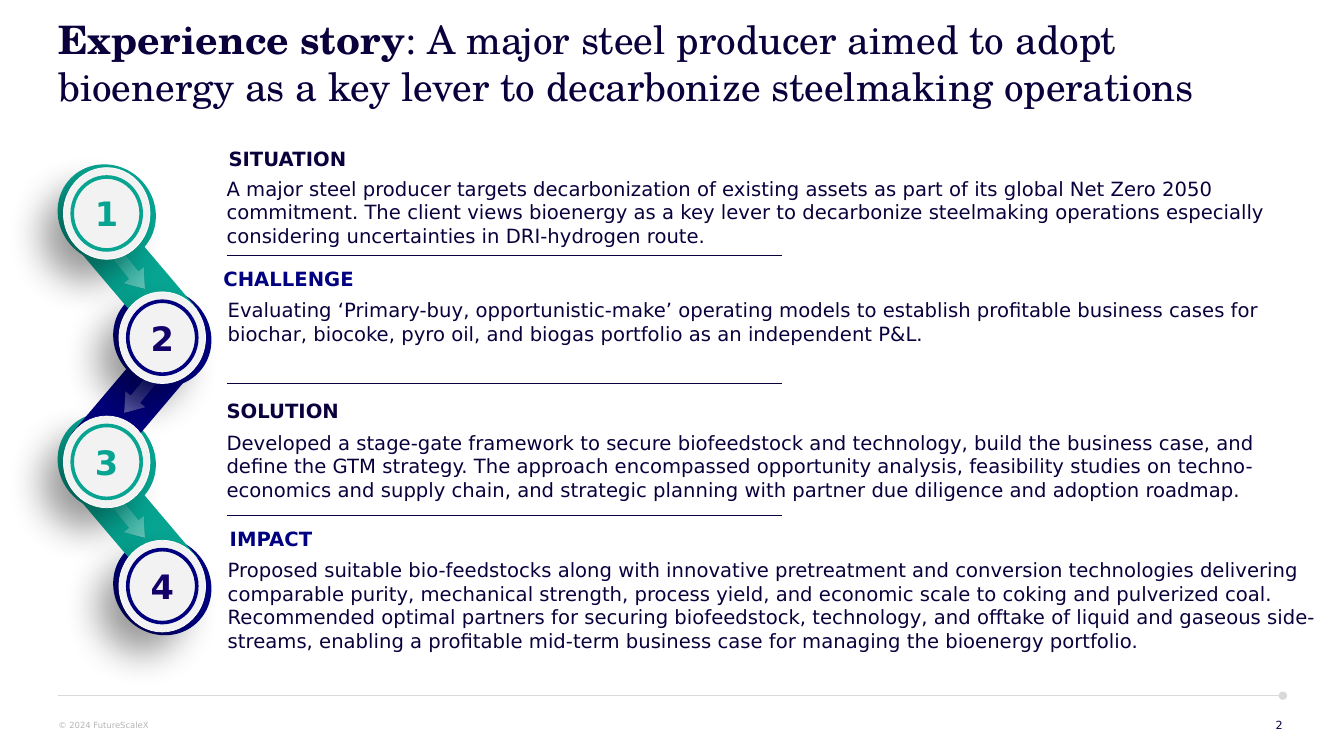
"""Build the experience story slide with four numbered steps."""
from dataclasses import dataclass

from lxml import etree
from pptx import Presentation
from pptx.dml.color import RGBColor
from pptx.enum.shapes import MSO_CONNECTOR, MSO_SHAPE
from pptx.enum.text import MSO_ANCHOR, MSO_AUTO_SIZE, PP_ALIGN
from pptx.oxml.ns import qn
from pptx.util import Cm, Pt

STRAIGHT = MSO_CONNECTOR.STRAIGHT
OVAL, RECT = MSO_SHAPE.OVAL, MSO_SHAPE.RECTANGLE
DONUT, ARROW = MSO_SHAPE.DONUT, MSO_SHAPE.RIGHT_ARROW
TOP, MIDDLE = MSO_ANCHOR.TOP, MSO_ANCHOR.MIDDLE
LEFT, CENTER, RIGHT = PP_ALIGN.LEFT, PP_ALIGN.CENTER, PP_ALIGN.RIGHT
GROW, FIXED = MSO_AUTO_SIZE.SHAPE_TO_FIT_TEXT, MSO_AUTO_SIZE.NONE

INK = RGBColor(0x0B, 0x00, 0x3C)
NAVY = RGBColor(0x00, 0x00, 0x7E)
BLUE = RGBColor(0x00, 0x00, 0x80)
VIOLET = RGBColor(0x13, 0x00, 0x69)
TEAL = RGBColor(0x06, 0xA4, 0x91)
TEAL_TEXT = RGBColor(0x07, 0xA5, 0x91)
PALE = RGBColor(0xF2, 0xF2, 0xF2)
WHITE = RGBColor(0xFF, 0xFF, 0xFF)
RULE_GREY = RGBColor(0xD9, 0xD9, 0xD9)
FOOTER_GREY = RGBColor(0xB5, 0xB5, 0xB5)

SANS, SERIF = "DejaVu Sans", "TeX Gyre Schola"
STEP_X, STEP_TOP, STEP_GAP = (2.69, 4.09), 5.38, 3.13
BAND_ANGLE, ARROW_ANGLE = 49.7, 51


@dataclass
class Box:
    left: float
    top: float
    width: float
    height: float


@dataclass
class Section:
    heading: str
    heading_box: Box
    color: RGBColor
    body: str
    body_box: Box


@dataclass
class Step:
    number: int
    x: float
    y: float
    side: int
    color: RGBColor
    text_color: RGBColor


SECTIONS = [
    Section("SITUATION", Box(4.24, 3.58, 28.3, 0.86), INK,
            "A major steel producer targets decarbonization of existing assets as part of its "
            "global Net Zero 2050 commitment. The client views bioenergy as a key lever to "
            "decarbonize steelmaking operations especially considering uncertainties in "
            "DRI-hydrogen route.", Box(5.46, 4.32, 26.87, 2.06)),
    Section("CHALLENGE", Box(4.11, 6.6, 27.23, 0.86), BLUE,
            "Evaluating ‘Primary-buy, opportunistic-make’ operating models to establish "
            "profitable business cases for biochar, biocoke, pyro oil, and biogas portfolio "
            "as an independent P&L.", Box(5.49, 7.39, 27.51, 1.45)),
    Section("SOLUTION", Box(4.19, 9.93, 27.23, 0.86), INK,
            "Developed a stage-gate framework to secure biofeedstock and technology, build the "
            "business case, and define the GTM strategy. The approach encompassed opportunity "
            "analysis, feasibility studies on techno-economics and supply chain, and strategic "
            "planning with partner due diligence and adoption roadmap.",
            Box(5.46, 10.72, 27.86, 2.06)),
    Section("IMPACT", Box(4.27, 13.16, 27.23, 0.86), BLUE,
            "Proposed suitable bio-feedstocks along with innovative pretreatment and conversion "
            "technologies delivering comparable purity, mechanical strength, process yield, and "
            "economic scale to coking and pulverized coal. Recommended optimal partners for "
            "securing biofeedstock, technology, and offtake of liquid and gaseous side-streams, "
            "enabling a profitable mid-term business case for managing the bioenergy portfolio.",
            Box(5.49, 13.94, 28.09, 2.64)),
]
DIVIDERS = (6.43, 9.65, 12.98)
STEPS = [Step(i + 1, STEP_X[i % 2], STEP_TOP + STEP_GAP * i, -1 if i % 2 else 1,
              (TEAL, NAVY)[i % 2], (TEAL_TEXT, VIOLET)[i % 2]) for i in range(4)]


def add_run(p, text: str, color: RGBColor, size: float, bold: bool = False, name: str = SANS):
    """Append a formatted run."""
    r = p.add_run()
    r.text = text
    for key, value in {"size": Pt(size), "bold": bold, "name": name}.items():
        setattr(r.font, key, value)
    r.font.color.rgb = color


def set_frame(tf, margins: tuple[float, float], anchor=TOP, wrap: bool = True, size=FIXED):
    """Set the side and vertical margins, anchor and wrapping of a text frame."""
    side, edge = (Cm(m) for m in margins)
    values = {"margin_left": side, "margin_right": side, "margin_top": edge,
              "margin_bottom": edge, "vertical_anchor": anchor, "word_wrap": wrap,
              "auto_size": size}
    for key, value in values.items():
        setattr(tf, key, value)


def add_text(s, box: Box, margins=(0.25, 0.13), align=LEFT, indent: float = 0, **frame):
    """Add a text box and return its first paragraph."""
    sp = s.shapes.add_textbox(Cm(box.left), Cm(box.top), Cm(box.width), Cm(box.height))
    set_frame(sp.text_frame, margins, **frame)
    p = sp.text_frame.paragraphs[0]
    p.alignment = align
    if indent:
        p._p.get_or_add_pPr().set("marL", str(Cm(indent)))
    return p


def add_centered(s, kind, x: float, y: float, size: tuple[float, float], color: RGBColor,
                 rotation: float = 0):
    """Add a plain shape around a centre point."""
    w, h = size
    sp = s.shapes.add_shape(kind, Cm(x - w / 2), Cm(y - h / 2), Cm(w), Cm(h))
    sp.shadow.inherit = False
    sp.fill.solid()
    sp.fill.fore_color.rgb = color
    sp.line.fill.background()
    sp.rotation = rotation
    return sp


def add_line(s, x1: float, x2: float, y: float, color: RGBColor, width: float,
             dot: bool = False):
    """Add a horizontal rule, with a dot at its right end on request."""
    sp = s.shapes.add_connector(STRAIGHT, Cm(x1), Cm(y), Cm(x2), Cm(y))
    sp.line.color.rgb = color
    sp.line.width = Pt(width)
    if dot:
        etree.SubElement(sp.line._get_or_add_ln(), qn("a:tailEnd"), type="oval")
    etree.SubElement(sp._element.spPr, qn("a:effectLst"))


def add_arrow(s, step: Step):
    """Add the fading arrow that leaves a step."""
    angle = ARROW_ANGLE if step.side > 0 else 180 - ARROW_ANGLE
    sp = add_centered(s, ARROW, step.x + 0.11 * step.side, step.y + 0.85, (2.68, 0.65),
                      PALE, angle)
    sp.adjustments[0], sp.adjustments[1] = 0.47, 0.69
    sp.fill.gradient()
    sp.fill.gradient_angle = 0
    for stop, position in zip(sp.fill.gradient_stops, (0.49, 1)):
        stop.position = position
        stop.color.rgb = PALE
    colors = sp._element.spPr.findall(".//" + qn("a:gs") + "/" + qn("a:srgbClr"))
    for color, alpha in zip(colors, ("0", "49000")):
        etree.SubElement(color, qn("a:alpha"), val=alpha)


def add_disc(s, step: Step):
    """Add the numbered disc with its soft shadow."""
    sp = add_centered(s, OVAL, step.x, step.y, (2.18, 2.31), PALE)
    sp.line.color.rgb = WHITE
    sp.line.width = Pt(0.5)
    effects = sp._element.spPr.find(qn("a:effectLst"))
    shadow = etree.SubElement(effects, qn("a:outerShdw"), blurRad=str(Pt(27)),
                              dist=str(Pt(21)), dir="8100000", algn="ctr", rotWithShape="0")
    color = etree.SubElement(shadow, qn("a:srgbClr"), val="000000")
    etree.SubElement(color, qn("a:alpha"), val="40000")
    set_frame(sp.text_frame, (0.13, 0.13), MIDDLE)
    p = sp.text_frame.paragraphs[0]
    p.alignment = CENTER
    add_run(p, str(step.number), step.text_color, 24, True)


def add_steps(s):
    """Draw the chain of steps from the last to the first."""
    for step in reversed(STEPS):
        linked = step.number < len(STEPS)
        if linked:
            add_centered(s, RECT, sum(STEP_X) / 2, step.y + STEP_GAP / 2, (3.35, 1.32),
                         step.color, BAND_ANGLE * step.side)
        add_centered(s, OVAL, step.x, step.y, (2.54, 2.41), step.color, 45)
        if linked:
            add_arrow(s, step)
    for step in STEPS:
        add_disc(s, step)
    for step in STEPS:
        add_centered(s, DONUT, step.x, step.y, (1.83, 1.93), step.color).adjustments[0] = 0.05


def main():
    """Build and save the slide."""
    prs = Presentation()
    prs.slide_width, prs.slide_height = Cm(33.87), Cm(19.05)
    s = prs.slides.add_slide(prs.slide_layouts[6])
    add_line(s, 1.47, 32.33, 17.53, RULE_GREY, 0.25, dot=True)
    p = add_text(s, Box(1.47, 18.16, 2.41, 0.25), (0, 0), anchor=MIDDLE, wrap=False, size=GROW)
    add_run(p, "© 2024 FutureScaleX", FOOTER_GREY, 6)
    p = add_text(s, Box(31.85, 18.11, 0.48, 0.33), (0, 0), RIGHT, wrap=False, size=GROW)
    add_run(p, "2", INK, 8)
    p = add_text(s, Box(1.47, 0.38, 31.22, 2.69), (0, 0))
    add_run(p, "Experience story", INK, 28, True, SERIF)
    add_run(p, ": A major steel producer aimed to adopt bioenergy as a key lever to "
            "decarbonize steelmaking operations", INK, 28, name=SERIF)
    add_steps(s)
    for section in SECTIONS:
        p = add_text(s, section.heading_box, indent=1.27, size=GROW)
        add_run(p, section.heading, section.color, 14, True)
        add_run(add_text(s, section.body_box, size=GROW), section.body, INK, 14)
    for y in DIVIDERS:
        add_line(s, 5.72, 19.71, y, INK, 0.5)
    prs.save("out.pptx")


if __name__ == "__main__":
    main()
